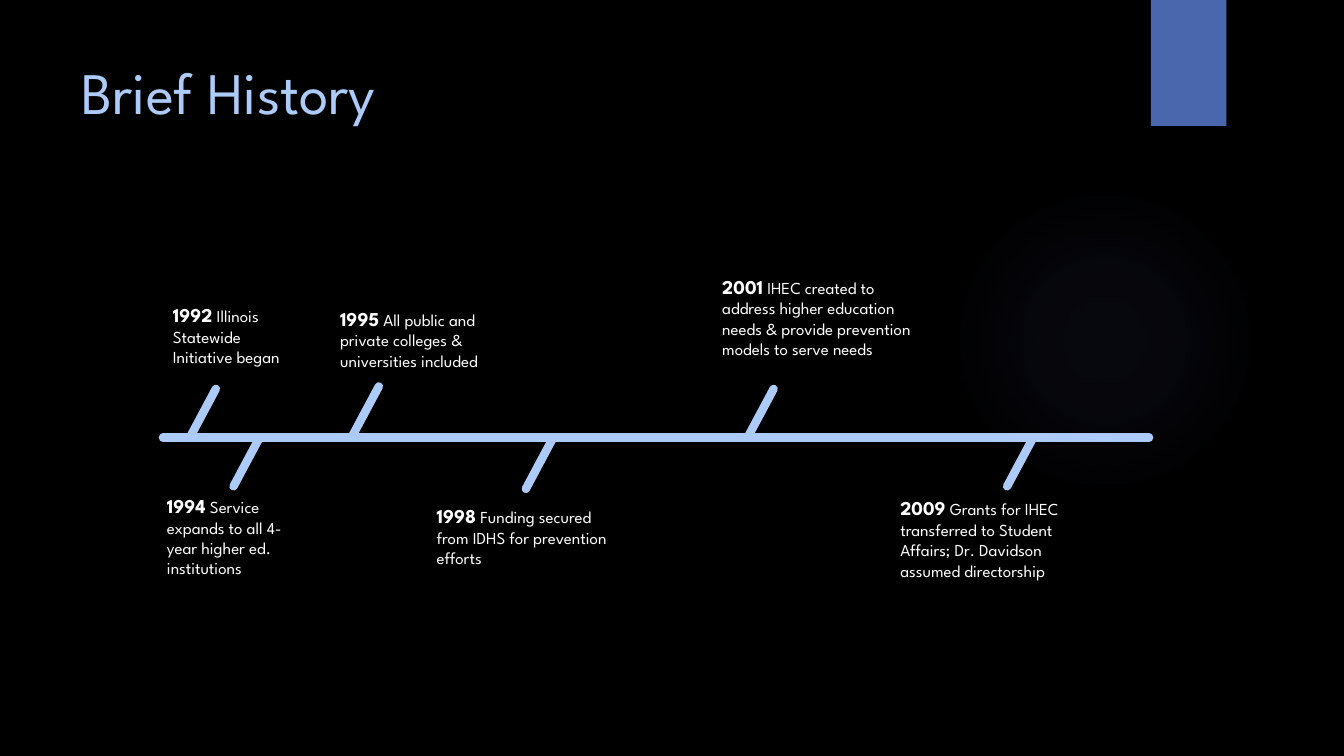
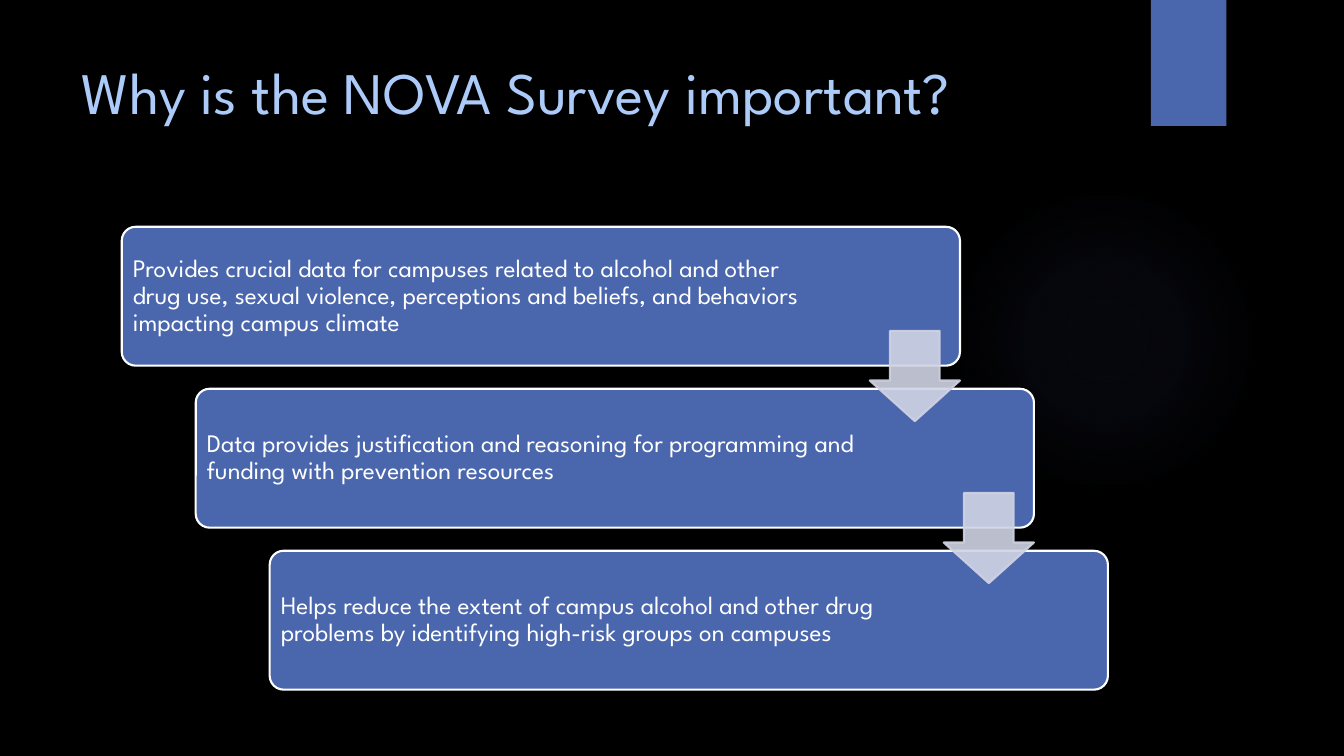
from dataclasses import dataclass

from pptx import Presentation
from pptx import util as u
from pptx.dml.color import RGBColor
from pptx.enum import shapes, text
from pptx.oxml import ns, parse_xml
from pptx.oxml.xmlchemy import OxmlElement

COLS, ROWS = 160, 90
CELL = u.Inches(1 / 12)


@dataclass(frozen=True)
class Theme:
    """Colours, font and type sizes of the deck."""
    font: str = "League Spartan"
    ground: str = "000000"
    accent: str = "4A66AC"
    light: str = "ACCBF9"
    glow: str = "5C64B7"
    arrow: str = "D0D3E3"
    ink: str = "FFFFFF"
    title: int = 42
    card: int = 18
    year: int = 14
    note: int = 12
    rule: float = 6
    edge: float = 1.5


@dataclass(frozen=True)
class Box:
    """A region measured in grid columns and rows."""
    x: float
    y: float
    w: float
    h: float

    def emu(self):
        """Return left, top, width and height in slide units."""
        return [grid(v) for v in (self.x, self.y, self.w, self.h)]


T = Theme()
TITLE = Box(8.5, 6, 123.5, 18.4)
BAR = Box(137, 0, 9, 15)
GLOW = Box(113, 22, 37, 37)
TIMELINE = Box(19.4, 32.1, 117.4, 40)
STEPS = Box(14.5, 27, 117.4, 55.1)

EVENTS = [
    ("1992", ["Illinois Statewide", "Initiative began"], 0, -16.6, 19.1, 3.2, 0),
    ("1994", ["Service expands to all 4-year higher ed. institutions"],
     -0.7, 6.1, 19.1, 11.5, 0),
    ("1995", ["All public and private colleges & universities included"],
     19.9, -16.2, 22.9, 22.6, -0.3),
    ("1998", ["Funding secured from IDHS for prevention efforts"],
     31.4, 7.3, 22.9, 46.3, 0.3),
    ("2001", ["IHEC created to address higher education needs & provide "
              "prevention models to serve needs"], 65.4, -20, 25.8, 69.6, 0),
    ("2009", ["Grants for IHEC transferred to Student Affairs; Dr. Davidson "
              "assumed directorship"], 86.6, 6.4, 25.9, 103.6, 0),
]

REASONS = [
    "Provides crucial data for campuses related to alcohol and other drug use, "
    "sexual violence, perceptions and beliefs, and behaviors impacting campus climate",
    "Data provides justification and reasoning for programming and funding with "
    "prevention resources",
    "Helps reduce the extent of campus alcohol and other drug problems by "
    "identifying high-risk groups on campuses",
]


def grid(n):
    """Convert grid cells to slide units."""
    return round(n * CELL)


def rgb(color):
    """Return a colour object for a hex string."""
    return RGBColor.from_string(color)


def style(r, size, color, bold=False):
    """Format one run."""
    r.font.name, r.font.size, r.font.bold = T.font, u.Pt(size), bold
    r.font.color.rgb = rgb(color)


def add_shape(s, kind, box, fill, line=None, adj=()):
    """Add a flat preset shape."""
    sp = s.shapes.add_shape(kind, *box.emu())
    sp.shadow.inherit = False
    sp.fill.solid()
    sp.fill.fore_color.rgb = rgb(fill)
    if line:
        sp.line.color.rgb = rgb(line)
        sp.line.width = u.Pt(T.edge)
    else:
        sp.line.fill.background()
    for i, value in enumerate(adj):
        sp.adjustments[i] = value
    return sp


def add_line(s, x1, y1, x2, y2):
    """Add a thick line with round ends."""
    c = s.shapes.add_connector(
        shapes.MSO_CONNECTOR.STRAIGHT, *[grid(v) for v in (x1, y1, x2, y2)])
    c.line.color.rgb = rgb(T.light)
    c.line.width = u.Pt(T.rule)
    c.line._get_or_add_ln().set("cap", "rnd")
    c._element.spPr.append(OxmlElement("a:effectLst"))


def add_glow(s, box):
    """Add a faint radial glow."""
    sp = add_shape(s, shapes.MSO_SHAPE.OVAL, box, T.glow)
    stops = "".join(
        f'<a:gs pos="{pos * 1000}"><a:srgbClr val="{T.glow}">'
        f'<a:alpha val="{alpha * 1000}"/></a:srgbClr></a:gs>'
        for pos, alpha in ((0, 7), (36, 6), (69, 0)))
    gradient = parse_xml(
        f'<a:gradFill {ns.nsdecls("a")}><a:gsLst>{stops}</a:gsLst>'
        '<a:path path="circle"><a:fillToRect l="50000" t="50000" r="50000" '
        'b="50000"/></a:path></a:gradFill>')
    spPr = sp._element.spPr
    spPr.replace(spPr.find(ns.qn("a:solidFill")), gradient)


def add_slide(prs, title):
    """Add a titled slide with the shared decoration."""
    s = prs.slides.add_slide(prs.slide_layouts[5])
    add_glow(s, GLOW)
    add_shape(s, shapes.MSO_SHAPE.RECTANGLE, BAR, T.accent)
    sp = s.shapes.title
    sp.left, sp.top, sp.width, sp.height = TITLE.emu()
    tf = sp.text_frame
    tf.text = title
    tf.auto_size = text.MSO_AUTO_SIZE.NONE
    tf.vertical_anchor = text.MSO_ANCHOR.TOP
    p = tf.paragraphs[0]
    p.alignment = text.PP_ALIGN.LEFT
    style(p.runs[0], T.title, T.light)
    return s


def add_event(s, left, axis, event):
    """Add one dated label and its slanted tick."""
    year, notes, x, y, w, tick, gap = event
    sp = s.shapes.add_textbox(*Box(left + x, axis + y, w, 9).emu())
    tf = sp.text_frame
    tf.word_wrap = True
    tf.auto_size = text.MSO_AUTO_SIZE.SHAPE_TO_FIT_TEXT
    p = tf.paragraphs[0]
    p.text = year
    style(p.runs[0], T.year, T.ink, True)
    r = p.add_run()
    r.text = " " + notes[0]
    style(r, T.note, T.ink)
    for note in notes[1:]:
        p = tf.add_paragraph()
        p.text = note
        style(p.runs[0], T.note, T.ink)
    side = 1 if y > 0 else -1
    foot = axis + gap
    add_line(s, left + tick, foot, left + tick - side * 3.1, foot + side * 5.8)


def add_timeline(s, box, events):
    """Fill a box with a horizontal axis and its events."""
    axis = box.y + box.h / 2
    add_line(s, box.x, axis, box.x + box.w, axis)
    for event in events:
        add_event(s, box.x, axis, event)


def add_card(s, box, reason):
    """Add one rounded card with its text."""
    sp = add_shape(s, shapes.MSO_SHAPE.ROUNDED_RECTANGLE, box, T.accent, T.ink, [0.1])
    tf = sp.text_frame
    tf.text = reason
    tf.word_wrap = True
    tf.vertical_anchor = text.MSO_ANCHOR.MIDDLE
    tf.margin_left = tf.margin_top = tf.margin_bottom = u.Inches(0.07)
    tf.margin_right = grid(box.w * 0.18)
    p = tf.paragraphs[0]
    p.alignment = text.PP_ALIGN.LEFT
    p.line_spacing = 0.9
    style(p.runs[0], T.card, T.ink)


def add_arrow(s, box):
    """Add a slightly transparent down arrow."""
    sp = add_shape(s, shapes.MSO_SHAPE.DOWN_ARROW, box, T.arrow, T.arrow, [0.55, 0.45])
    for color in sp._element.spPr.iter(ns.qn("a:srgbClr")):
        alpha = OxmlElement("a:alpha")
        alpha.set("val", "90000")
        color.append(alpha)


def add_steps(s, box, reasons):
    """Fill a box with a staircase of cards joined by arrows."""
    n = len(reasons) - 1
    w, h = box.w * 0.85, box.h * 0.3
    dx, dy = (box.w - w) / n, (box.h - h) / n
    cards = [Box(box.x + i * dx, box.y + i * dy, w, h) for i in range(n + 1)]
    for card, reason in zip(cards, reasons):
        add_card(s, card, reason)
    side = h * 0.65
    for card in cards[:-1]:
        add_arrow(s, Box(card.x + w - side, card.y + h * 0.75, side, side))


def main():
    """Build and save the deck."""
    prs = Presentation()
    prs.slide_width, prs.slide_height = grid(COLS), grid(ROWS)
    fill = prs.slide_master.background.fill
    fill.solid()
    fill.fore_color.rgb = rgb(T.ground)
    add_timeline(add_slide(prs, "Brief History"), TIMELINE, EVENTS)
    add_steps(add_slide(prs, "Why is the NOVA Survey important?"), STEPS, REASONS)
    prs.save("out.pptx")


if __name__ == "__main__":
    main()
